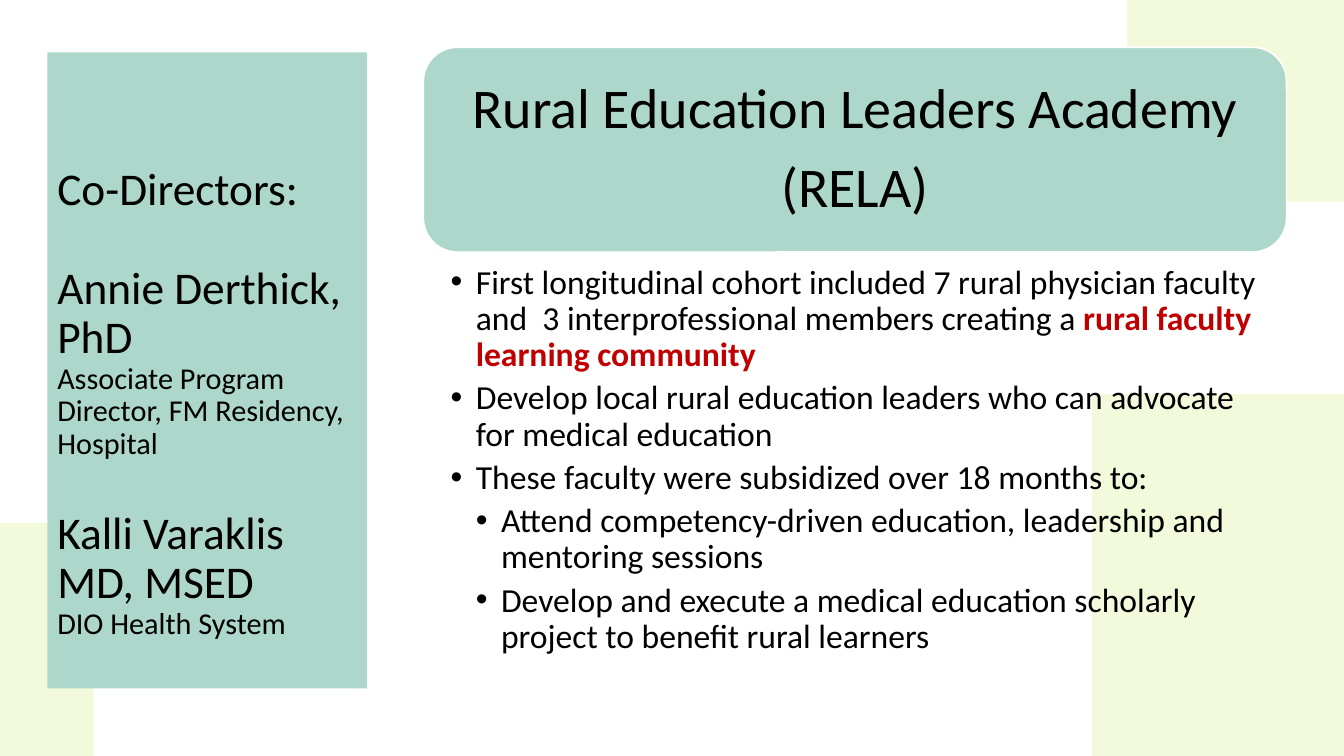
"""Build a slide that presents a rural education leaders academy."""
from lxml.etree import SubElement
from pptx import Presentation
from pptx.dml.color import RGBColor as Rgb
from pptx.enum.shapes import MSO_SHAPE as Kind
from pptx.enum.text import MSO_ANCHOR as Anchor, PP_ALIGN as Align
from pptx.oxml.ns import qn
from pptx.util import Inches, Pt

COLORS = {"lime": "F3FADC", "mint": "ACD7CA", "white": "FFFFFF",
          "black": "000000", "red": "C00000"}
FONT = "Calibri"
SIZE = (13.33, 7.5)
BLOCKS = [(0, 5.19, 0.93, 2.31), (10.83, 3.91, 2.5, 3.59), (11.18, 0, 2.15, 2)]
PANEL = (0.47, 0.52, 3.17, 6.31)
BANNER = (4.2, 0.47, 8.56, 2.03)
BODY = (4.2, 2.6, 8.56, 4.44)
BIG, SMALL, GAP = 32.4, 21.6, 35.5
PEOPLE = [
    ("Co-Directors:", BIG, 0),
    ("Annie Derthick, PhD", BIG, GAP),
    ("Associate Program Director, FM Residency, Hospital", SMALL, 0),
    ("Kalli Varaklis MD, MSED", BIG, GAP),
    ("DIO Health System", SMALL, 0),
]
TITLE = ["Rural Education Leaders Academy", "(RELA)"]
POINTS = [
    (1, "First longitudinal cohort included 7 rural physician faculty and  3 "
        "interprofessional members creating a ", "rural faculty learning community"),
    (1, "Develop local rural education leaders who can advocate for medical education", ""),
    (1, "These faculty were subsidized over 18 months to:", ""),
    (2, "Attend competency-driven education, leadership and mentoring sessions", ""),
    (2, "Develop and execute a medical education scholarly project to benefit "
        "rural learners", ""),
]


def color(name):
    return Rgb.from_string(COLORS[name])


def add_block(slide, box, fill, kind=Kind.RECTANGLE, line=None):
    shape = slide.shapes.add_shape(kind, *map(Inches, box))
    shape.shadow.inherit = False
    shape.fill.solid()
    shape.fill.fore_color.rgb = color(fill)
    if line:
        shape.line.color.rgb = color(line)
        shape.line.width = Pt(1)
    else:
        shape.line.fill.background()
    return shape


def set_frame(frame, anchor, left, top, right, bottom):
    frame.word_wrap = True
    frame.vertical_anchor = anchor
    frame.margin_left, frame.margin_top = Inches(left), Inches(top)
    frame.margin_right, frame.margin_bottom = Inches(right), Inches(bottom)


def add_para(frame, index, text, size, align=Align.LEFT, before=0, after=0):
    para = frame.add_paragraph() if index else frame.paragraphs[0]
    para.text = text
    para.alignment = align
    para.line_spacing = 0.9
    para.space_before, para.space_after = Pt(before), Pt(after)
    style(para.runs[0], size)
    return para


def style(run, size, tint="black", bold=False):
    run.font.name, run.font.size, run.font.bold = FONT, Pt(size), bold
    run.font.color.rgb = color(tint)


def add_bullet(para, level):
    para.level = level
    props = para._p.get_or_add_pPr()
    props.set("marL", str(Inches(0.25 * level)))
    props.set("indent", str(Inches(-0.25)))
    SubElement(props, qn("a:buFont"), typeface="Arial")
    SubElement(props, qn("a:buChar"), char="•")


def main():
    deck = Presentation()
    deck.slide_width, deck.slide_height = map(Inches, SIZE)
    slide = deck.slides.add_slide(deck.slide_layouts[6])
    for box in BLOCKS:
        add_block(slide, box, "lime")

    frame = add_block(slide, PANEL, "mint").text_frame
    set_frame(frame, Anchor.TOP, 0.1, 1.13, 0.1, 0.05)
    for i, (text, size, before) in enumerate(PEOPLE):
        add_para(frame, i, text, size, before=before)

    banner = add_block(slide, BANNER, "mint", Kind.ROUNDED_RECTANGLE, "white")
    frame = banner.text_frame
    set_frame(frame, Anchor.MIDDLE, 0.17, 0.17, 0.17, 0.17)
    for i, text in enumerate(TITLE):
        after = 13 if i < len(TITLE) - 1 else 0
        add_para(frame, i, text, 40, Align.CENTER, after=after)

    frame = slide.shapes.add_textbox(*map(Inches, BODY)).text_frame
    set_frame(frame, Anchor.TOP, 0.27, 0.03, 0.19, 0.03)
    for i, (level, text, strong) in enumerate(POINTS):
        para = add_para(frame, i, text, 24, after=5)
        add_bullet(para, level)
        if strong:
            run = para.add_run()
            run.text = strong
            style(run, 24, "red", True)
    deck.save("out.pptx")


if __name__ == "__main__":
    main()
